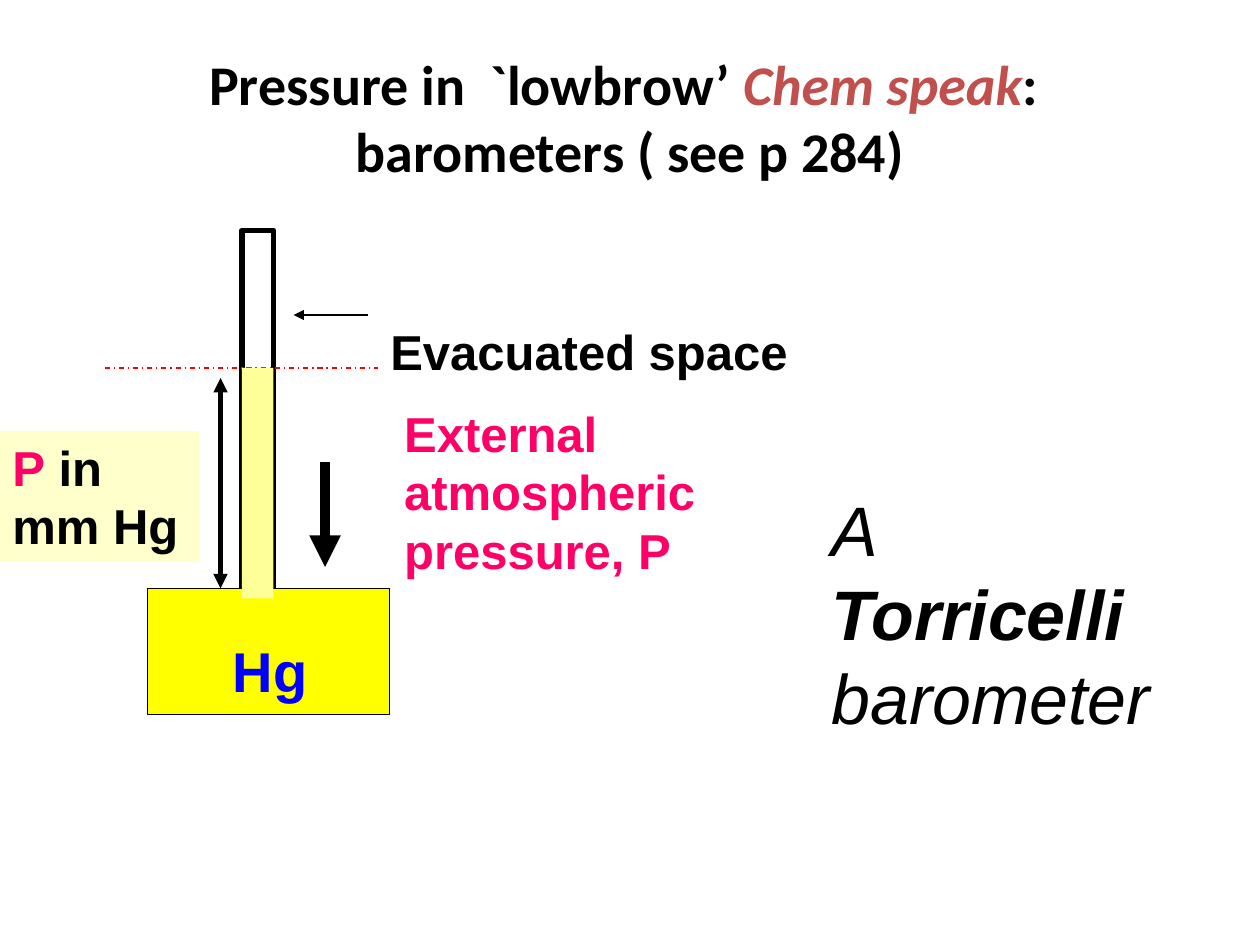
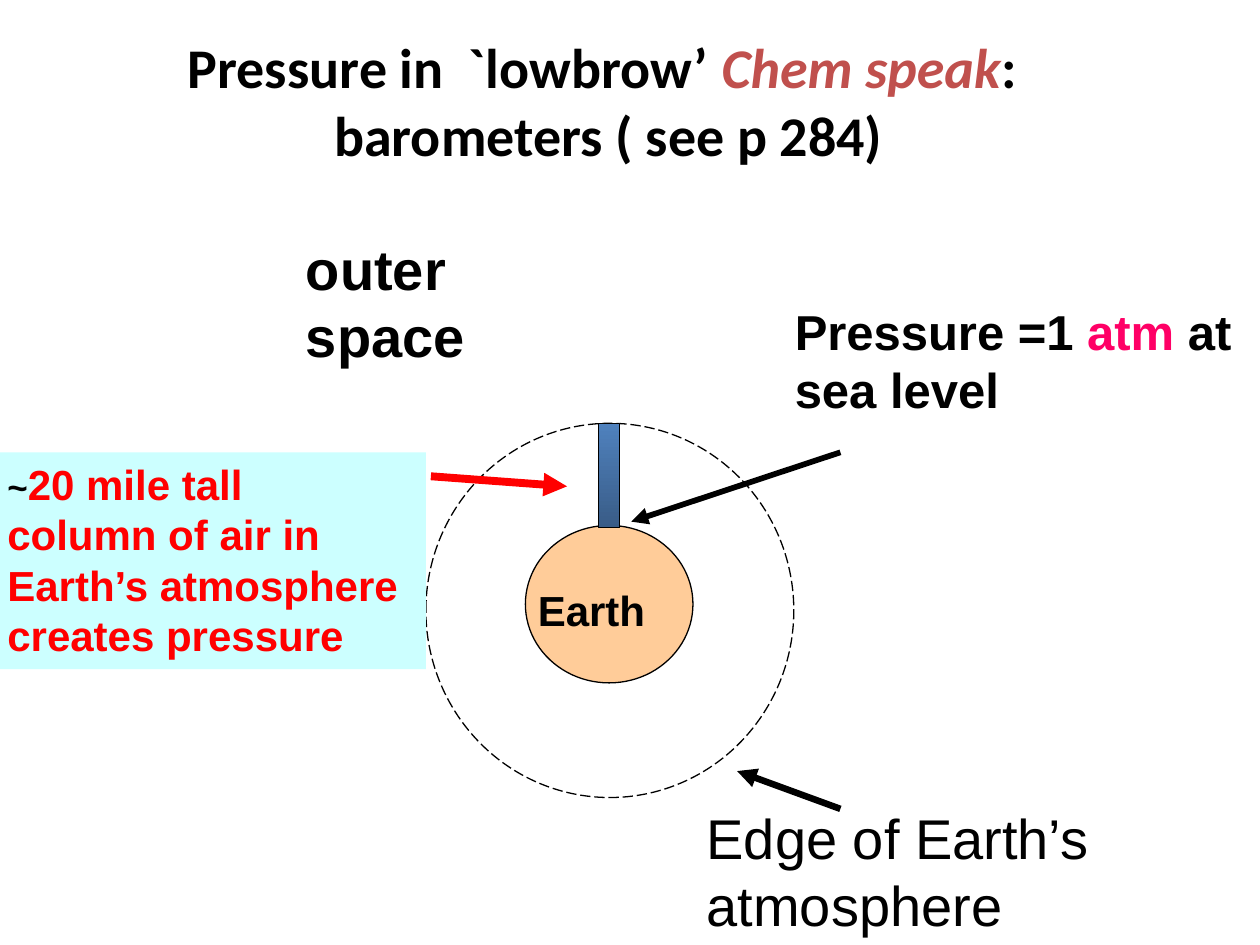
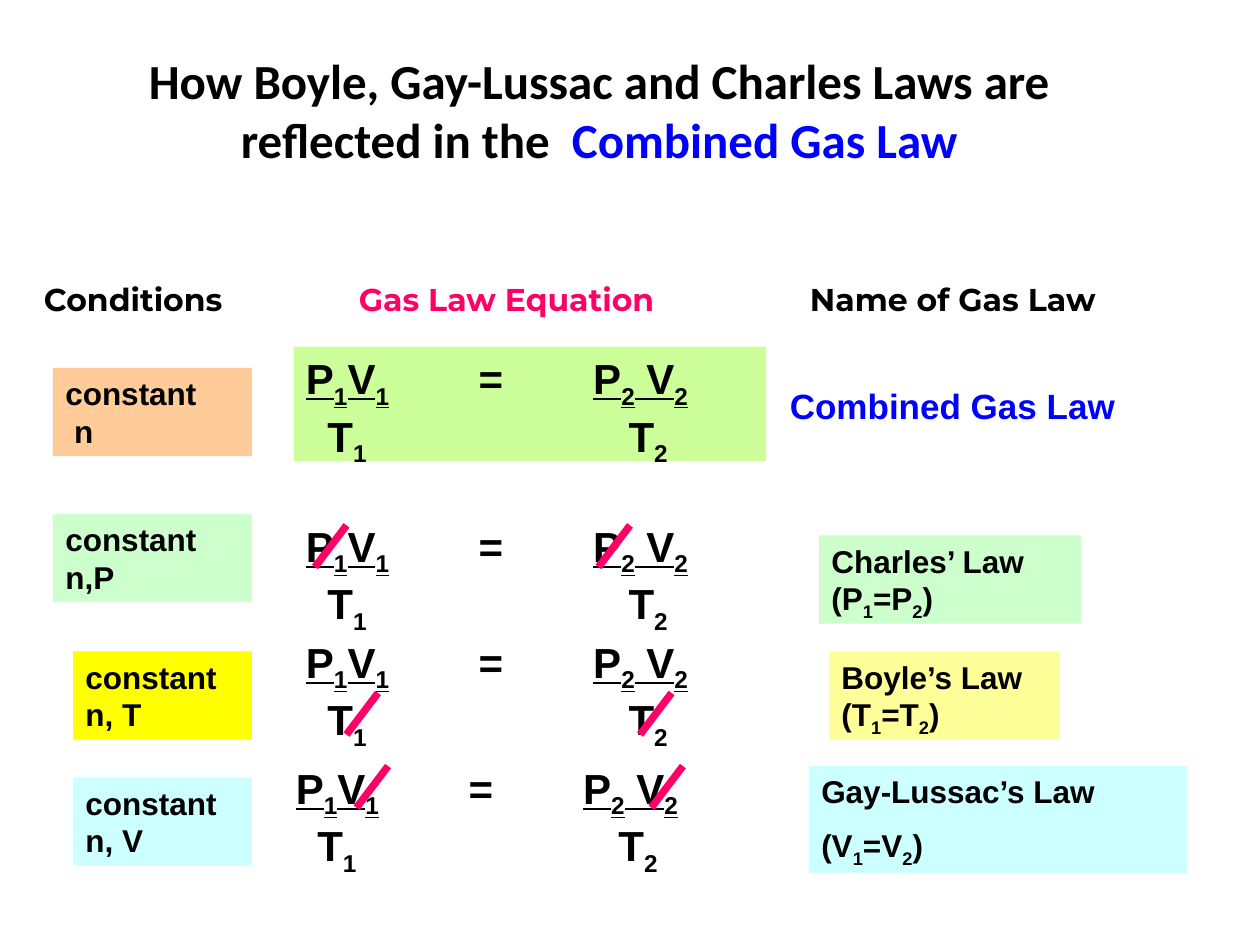
"""Three slides on barometers, air pressure and the combined gas law."""
from dataclasses import dataclass

from lxml import etree
from pptx import Presentation
from pptx import util as u
from pptx.dml.color import RGBColor
from pptx.enum import dml, shapes, text
from pptx.oxml.ns import qn


@dataclass(frozen=True)
class Theme:
    black: str = "000000"
    pink: str = "FF0066"
    red: str = "FF0000"
    brick: str = "C0504D"
    blue: str = "0000FF"
    yellow: str = "FFFF00"
    pale_yellow: str = "FFFF99"
    cream: str = "FFFFCC"
    peach: str = "FFCC99"
    aqua: str = "CCFFFF"
    mint: str = "CCFFCC"
    lime: str = "CCFF99"
    air_top: str = "4F81BD"
    air_bottom: str = "395C87"
    title_font: str = "Calibri"
    body_font: str = "Arial"
    label_font: str = "Montserrat"
    huge: int = 40
    title: int = 32
    large: int = 28
    medium: int = 24
    law: int = 20
    small: int = 18
    hairline: float = 0.75
    slash: float = 4.25


theme = Theme()
RECT, OVAL = shapes.MSO_SHAPE.RECTANGLE, shapes.MSO_SHAPE.OVAL


def add_box(page, at, paras=(), size=theme.large, kind=None, fill=None, line=None,
            color=theme.black, bold=True, italic=None, font=theme.body_font, title=False):
    """Add a shape or text box; spans are (text, font changes), and _ lowers the next character."""
    place = [u.Inches(length) for length in at]
    if kind is None:
        box = page.shapes.add_textbox(*place)
    else:
        box = page.shapes.add_shape(kind, *place)
        box.shadow.inherit = False
        box.fill.background()
        box.line.fill.background()
    if fill:
        box.fill.solid()
        box.fill.fore_color.rgb = RGBColor.from_string(fill)
    if line:
        box.line.color.rgb = RGBColor.from_string(theme.black)
        box.line.width = u.Pt(line)
    frame = box.text_frame
    frame.word_wrap = True
    frame.vertical_anchor = text.MSO_ANCHOR.MIDDLE if title else text.MSO_ANCHOR.TOP
    for index, spans in enumerate(paras):
        para = frame.add_paragraph() if index else frame.paragraphs[0]
        para.alignment = text.PP_ALIGN.CENTER if title else text.PP_ALIGN.LEFT
        para.font.name, para.font.size = font, u.Pt(size)
        para.font.bold, para.font.italic = bold, italic
        para.font.color.rgb = RGBColor.from_string(color)
        for words, changes in [(spans, {})] if isinstance(spans, str) else spans:
            if words == "\n":
                para.add_line_break()
                continue
            first, *lowered = words.split("_")
            pieces = [(first, False)]
            for part in lowered:
                pieces += [(part[0], True), (part[1:], False)]
            for piece, is_low in pieces:
                if not piece:
                    continue
                span = para.add_run()
                span.text = piece
                for name, value in changes.items():
                    if name == "color":
                        span.font.color.rgb = RGBColor.from_string(value)
                    else:
                        setattr(span.font, name, value)
                if is_low:
                    span._r.get_or_add_rPr().set("baseline", "-25000")
    return box


def add_line(page, start, end, width=theme.hairline, color=theme.black, ends=(), dash=None):
    """Add a straight line with arrowheads at the named ends."""
    line = page.shapes.add_connector(
        shapes.MSO_CONNECTOR.STRAIGHT, *[u.Inches(length) for length in (*start, *end)])
    line.line.color.rgb = RGBColor.from_string(color)
    line.line.width = u.Pt(width)
    if dash:
        line.line.dash_style = dash
    properties = line._element.spPr
    for end_name in ends:
        etree.SubElement(properties.find(qn("a:ln")), qn(f"a:{end_name}End"), type="triangle")
    etree.SubElement(properties, qn("a:effectLst"))


deck = Presentation()
deck.slide_width, deck.slide_height = u.Inches(10), u.Inches(7.5)
barometer, planet, laws = [deck.slides.add_slide(deck.slide_layouts[6]) for _ in range(3)]

chem_title = [("Pressure in  `lowbrow’ ", {}),
              ("Chem speak", {"color": theme.brick, "italic": True}),
              (": ", {}), ("\n", {}), ("barometers ( see p 284)", {})]
for page, left, top in [(barometer, 0.5, 0.3), (planet, 0.33, 0.17)]:
    add_box(page, (left, top, 9, 1.25), [chem_title], theme.title,
            font=theme.title_font, title=True)

tube_left, tube_right, tube_top, tank_top, mercury_top = 1.92, 2.17, 1.83, 4.67, 2.92
tube_width = tube_right - tube_left
add_box(barometer, (tube_left, tube_top, tube_width, 3.42), kind=RECT, line=3.25)
add_box(barometer, (1.17, tank_top, 1.92, 1), kind=RECT, fill=theme.yellow, line=theme.hairline)
add_box(barometer, (1.5, tank_top, 0.92, 0.17), kind=RECT, fill=theme.yellow)
add_line(barometer, (1.5, tank_top), (tube_left, tank_top))
add_line(barometer, (2.42, tank_top), (tube_right, tank_top))
add_line(barometer, (2.92, 2.5), (2.33, 2.5), ends=["tail"])
add_box(barometer, (3, 2.5, 3.5, 0.57), ["Evacuated space"])
add_line(barometer, (0.83, mercury_top), (3, mercury_top), color=theme.red,
         dash=dml.MSO_LINE.DASH_DOT)
add_box(barometer, (0, 3.42, 1.58, 1.04), [[("P", {"color": theme.pink}), (" in mm Hg", {})]],
        kind=RECT, fill=theme.cream)
add_line(barometer, (2.58, 3.67), (2.58, 4.5), 6, ends=["tail"])
add_box(barometer, (3.11, 3.15, 2.83, 1.51), ["External atmospheric pressure, P"],
        color=theme.pink)
add_box(barometer, (1.75, 5, 0.88, 0.64), ["Hg"], theme.title, color=theme.blue)
add_line(barometer, (tube_left, tube_top), (tube_right, tube_top), 3)
add_box(barometer, (6.5, 3.81, 2.75, 2.12),
        [[("A ", {}), ("Torricelli ", {"bold": True}), ("barometer", {})]],
        theme.huge, bold=False, italic=True)
add_line(barometer, (1.75, tank_top), (1.75, 3), 2.75, ends=["head", "tail"])
add_box(barometer, (tube_left, mercury_top, tube_width, 1.83), kind=RECT, fill=theme.pale_yellow)

add_box(planet, (2.33, 1.81, 2.17, 1.18), ["outer space"], theme.title)
add_box(planet, (4.17, 4.17, 1.33, 1.25), kind=OVAL, fill=theme.peach, line=theme.hairline)
atmosphere = add_box(planet, (3.38, 3.36, 2.92, 2.97), kind=OVAL, line=theme.hairline)
atmosphere.line.dash_style = dml.MSO_LINE.LONG_DASH
air_column = add_box(planet, (4.75, 3.36, 0.17, 0.83), kind=RECT, line=theme.hairline)
air_column.fill.gradient()
air_column.fill.gradient_angle = 270
for stop, position, color in zip(air_column.fill.gradient_stops, (0, 1),
                                 (theme.air_top, theme.air_bottom)):
    stop.position = position
    stop.color.rgb = RGBColor.from_string(color)
add_box(planet, (4.17, 4.59, 1.26, 0.5), ["Earth"], theme.medium)
add_line(planet, (6.67, 6.42), (5.85, 6.12), 3.75, ends=["tail"])
add_box(planet, (-0.04, 3.59, 3.42, 1.72),
        [[("~", {"size": u.Pt(theme.law), "color": theme.black}), ("20 mile tall", {})],
         "column of air in Earth’s atmosphere creates pressure"],
        theme.medium, RECT, theme.aqua, color=theme.red)
add_line(planet, (6.67, 3.59), (5.01, 4.14), 3.25, ends=["tail"])
add_box(planet, (6.21, 2.34, 3.74, 1.04),
        [[("Pressure =1 ", {}), ("atm ", {"color": theme.pink}), ("at sea level", {})]])
add_line(planet, (3.42, 3.78), (4.5, 3.86), 4.5, theme.red, ["tail"])
add_box(planet, (5.51, 6.33, 4.09, 1.18), ["Edge of Earth’s atmosphere"], theme.title, bold=False)

law_title = add_box(
    laws, (0.42, 0.3, 8.67, 1.62),
    [[("How Boyle, Gay-Lussac and Charles Laws are reflected in the  ", {}),
      ("Combined Gas Law", {"color": theme.blue})]],
    theme.large, font=theme.title_font, title=True)
law_title.text_frame.margin_bottom = u.Inches(0.53)

for label, left, width, color in [("Conditions", 0.25, 2.17, theme.black),
                                  ("Gas Law Equation", 2.75, 2.83, theme.pink),
                                  ("Name of Gas Law", 6.33, 2.83, theme.black)]:
    add_box(laws, (left, 2.17, width, 0.4), [label], theme.small,
            color=color, font=theme.label_font)

condition_boxes = [
    ((0.42, 2.92, 1.58, 0.7), ["constant", " n"], theme.peach),
    ((0.42, 4.08, 1.58, 0.7), ["constant n,P"], theme.mint),
    ((0.58, 5.17, 1.42, 0.7), ["constant n, T"], theme.yellow),
    ((0.58, 6.17, 1.42, 0.7), ["constant n, V"], theme.aqua),
]
law_boxes = [
    ((6.5, 4.25, 2.08, 0.7), ["Charles’ Law (P_1=P_2)"], theme.mint),
    ((6.58, 5.17, 1.83, 0.7), ["Boyle’s Law (T_1=T_2)"], theme.pale_yellow),
    ((6.42, 6.08, 3, 0.85), ["Gay-Lussac’s Law", "(V_1=V_2)"], theme.aqua),
]
for at, paras, fill in condition_boxes + law_boxes:
    box = add_box(laws, at, paras, theme.small, RECT, fill)
box.text_frame.paragraphs[1].space_before = u.Pt(9)
add_box(laws, (6.17, 3, 3, 0.43), ["Combined Gas Law"], theme.law, color=theme.blue)

underlined = {"underline": True}
equation_tabs = [(1.37, 2, 2.28), (0.17, 2.56)]
for left, top, kind, fill, long_bar in [(2.33, 2.75, RECT, theme.lime, True),
                                        (2.33, 4.08, None, None, True),
                                        (2.33, 5, None, None, False),
                                        (2.25, 6, None, None, False)]:
    equation = add_box(
        laws, (left, top, 3.75, 0.91),
        [[("P_1V_1", underlined), ("\t=\t", {}), ("\t", {"underline": long_bar}),
          ("P_2 V_2", underlined)],
         "\tT_1\tT_2"],
        theme.medium, kind, fill)
    for para, stops in zip(equation.text_frame.paragraphs, equation_tabs):
        tab_list = etree.Element(qn("a:tabLst"))
        for stop in stops:
            etree.SubElement(tab_list, qn("a:tab"), pos=str(u.Inches(stop)), algn="l")
        para._p.get_or_add_pPr().insert(0, tab_list)

for top, rights in [(4.17, (2.75, 5)), (5.5, (3, 5.33)), (6.08, (3.08, 5.42))]:
    for right in rights:
        add_line(laws, (right, top), (right - 0.25, top + 0.33), theme.slash, theme.pink)

deck.save("out.pptx")
